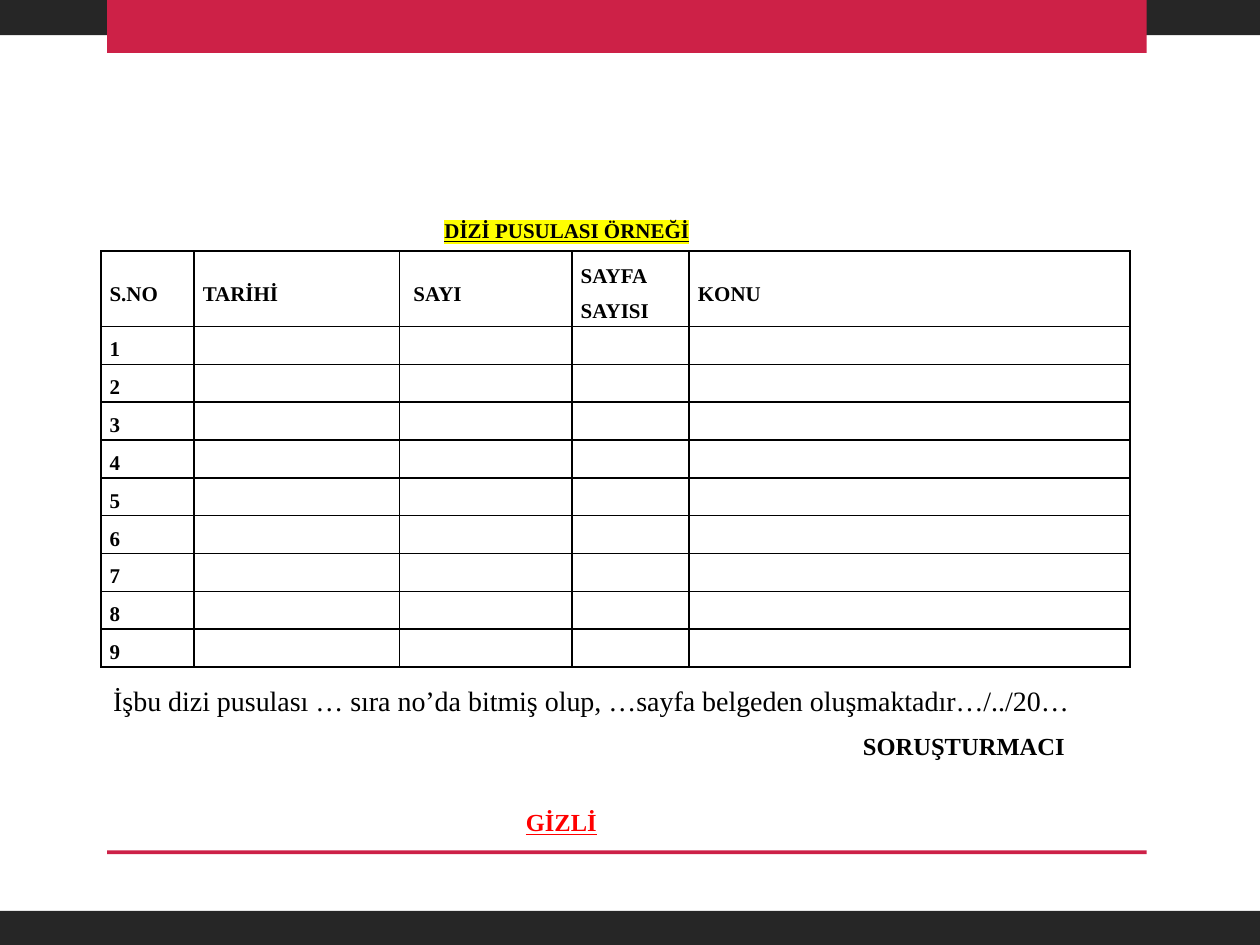
import dataclasses

import pptx
import pptx.dml.color
import pptx.enum.shapes
import pptx.enum.text
import pptx.oxml.ns
import pptx.util
from lxml import etree

Inches = pptx.util.Inches
Pt = pptx.util.Pt
RGB = pptx.dml.color.RGBColor.from_string
Align = pptx.enum.text.PP_ALIGN
Anchor = pptx.enum.text.MSO_ANCHOR
qn = pptx.oxml.ns.qn


@dataclasses.dataclass(frozen=True)
class Theme:
    font: str = "Times New Roman"
    dark: str = "262626"
    accent: str = "CD2147"
    ink: str = "000000"
    alert: str = "FF0000"
    marker: str = "FFFF00"
    small: int = 12
    medium: int = 14
    large: int = 16


class SlideBuilder:
    def __init__(self, slide, theme):
        self.slide = slide
        self.theme = theme

    def band(self, left, top, width, height, color):
        sp = self.slide.shapes.add_shape(
            pptx.enum.shapes.MSO_SHAPE.RECTANGLE,
            Inches(left), Inches(top), Inches(width), Inches(height))
        sp.shadow.inherit = False
        sp.fill.solid()
        sp.fill.fore_color.rgb = RGB(color)
        sp.line.fill.background()

    def style(self, p, size, color=None, bold=True, underline=None,
              align=Align.LEFT, spacing=1.0):
        p.alignment = align
        p.line_spacing = spacing
        p.font.name = self.theme.font
        p.font.size = Pt(size)
        p.font.bold = bold
        p.font.underline = underline
        p.font.color.rgb = RGB(color or self.theme.ink)

    def fill_text(self, sp, text, size, wrap=False, **style):
        tf = sp.text_frame
        tf.word_wrap = wrap
        tf.auto_size = pptx.enum.text.MSO_AUTO_SIZE.SHAPE_TO_FIT_TEXT
        tf.vertical_anchor = Anchor.TOP
        p = tf.paragraphs[0]
        r = p.add_run()
        r.text = text
        self.style(p, size, **style)
        return r

    def text(self, left, top, width, height, text, size, **style):
        sp = self.slide.shapes.add_textbox(
            Inches(left), Inches(top), Inches(width), Inches(height))
        self.fill_text(sp, text, size, **style)

    def title(self, left, top, width, height, text):
        """Fill the title placeholder with underlined, highlighted text."""
        sp = self.slide.shapes.title
        sp.left, sp.top = Inches(left), Inches(top)
        sp.width, sp.height = Inches(width), Inches(height)
        r = self.fill_text(sp, text, self.theme.small, underline=True,
                           align=Align.CENTER, spacing=1.5)
        highlight = etree.SubElement(r.font._element, qn("a:highlight"))
        etree.SubElement(highlight, qn("a:srgbClr"), val=self.theme.marker)

    def border(self, cell):
        tc_pr = cell._tc.get_or_add_tcPr()
        for side in ("lnL", "lnR", "lnT", "lnB"):
            ln = etree.SubElement(tc_pr, qn(f"a:{side}"), w=str(Pt(1)))
            fill = etree.SubElement(ln, qn("a:solidFill"))
            etree.SubElement(fill, qn("a:srgbClr"), val=self.theme.ink)

    def cell(self, cell, text, anchor):
        cell.margin_left = cell.margin_right = Inches(0.07)
        cell.margin_top = cell.margin_bottom = 0
        cell.vertical_anchor = anchor
        self.border(cell)
        cell.fill.background()
        p = cell.text_frame.paragraphs[0]
        if text:
            p.text = text
            self.style(p, self.theme.small, align=Align.JUSTIFY, spacing=1.5)
        else:
            # The end mark keeps an empty cell from stretching its row.
            etree.SubElement(p._p, qn("a:endParaRPr"),
                             sz=str(self.theme.small * 100))

    def table(self, left, top, widths, header_height, row_height, rows):
        height = header_height + row_height * (len(rows) - 1)
        table = self.slide.shapes.add_table(
            len(rows), len(widths), Inches(left), Inches(top),
            Inches(sum(widths)), Inches(height)).table
        table.first_row = table.horz_banding = False
        for column, width in zip(table.columns, widths):
            column.width = Inches(width)
        for i, values in enumerate(rows):
            table.rows[i].height = Inches(row_height if i else header_height)
            for j, value in enumerate(values):
                self.cell(table.cell(i, j), value,
                          Anchor.TOP if i else Anchor.MIDDLE)


def main():
    prs = pptx.Presentation()
    prs.slide_width, prs.slide_height = Inches(10), Inches(7.5)
    theme = Theme()
    s = SlideBuilder(prs.slides.add_slide(prs.slide_layouts[5]), theme)

    for top in (0, 7.23):
        s.band(-0.01, top, 10.01, 0.28, theme.dark)
    for top, height in ((0, 0.42), (6.75, 0.03)):
        s.band(0.85, top, 8.25, height, theme.accent)

    header = ["S.NO", "TARİHİ", " SAYI", "SAYFA SAYISI", "KONU"]
    numbered = [[str(n), "", "", "", ""] for n in range(1, 10)]
    s.table(0.8, 1.99, [0.74, 1.63, 1.37, 0.93, 3.5], 0.56, 0.28,
            [header] + numbered)

    s.title(3.42, 1.58, 2.16, 0.4, "DİZİ PUSULASI ÖRNEĞİ")
    s.text(6.75, 5.75, 1.82, 0.34, "SORUŞTURMACI", theme.medium)
    s.text(4.07, 6.24, 0.77, 0.42, "GİZLİ", theme.medium, color=theme.alert,
           underline=True, align=Align.CENTER, spacing=1.5)
    s.text(0.8, 5.38, 8.23, 0.37,
           "İşbu dizi pusulası … sıra no’da bitmiş olup, …sayfa belgeden "
           "oluşmaktadır…/../20…",
           theme.large, wrap=True, bold=False, align=Align.JUSTIFY)

    prs.save("out.pptx")


if __name__ == "__main__":
    main()
